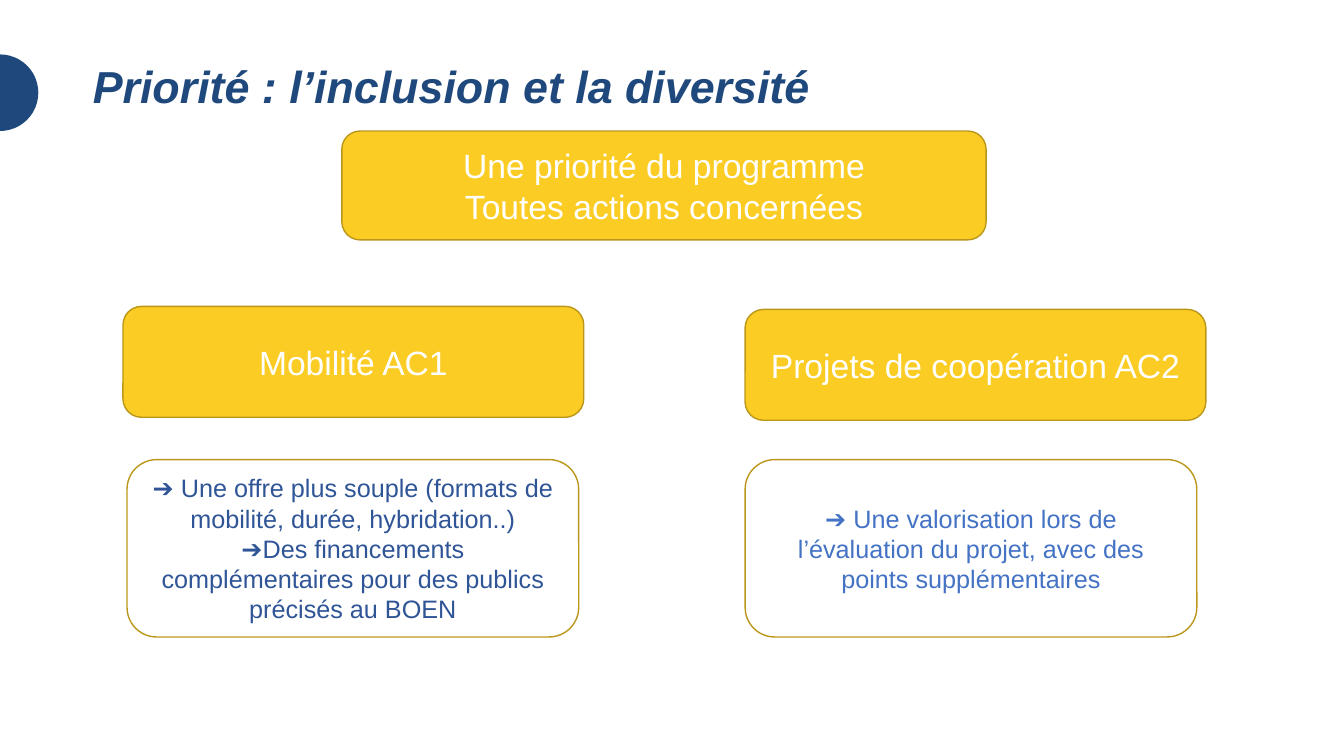
from pptx import Presentation
from pptx.dml.color import RGBColor
from pptx.enum.shapes import MSO_SHAPE as SHAPE
from pptx.enum.text import MSO_ANCHOR as ANCHOR, PP_ALIGN as ALIGN
from pptx.util import Inches, Pt

NAVY = RGBColor(0x1F, 0x49, 0x7D)
YELLOW = RGBColor(0xFB, 0xCC, 0x23)
OCHRE = RGBColor(0xBA, 0x97, 0x1A)
WHITE = RGBColor(0xFF, 0xFF, 0xFF)
DARK_BLUE = RGBColor(0x2F, 0x55, 0x97)
BLUE = RGBColor(0x44, 0x72, 0xC4)

prs = Presentation()
prs.slide_width = Inches(13.33)
prs.slide_height = Inches(7.5)
slide = prs.slides.add_slide(prs.slide_layouts[6])


def add_box(left, top, width, height, fill, size, color, lines):
    """Add a rounded box with one centred paragraph per line."""
    box = slide.shapes.add_shape(SHAPE.ROUNDED_RECTANGLE, Inches(left), Inches(top),
                                 Inches(width), Inches(height))
    box.shadow.inherit = False
    box.fill.solid()
    box.fill.fore_color.rgb = fill
    box.line.color.rgb = OCHRE
    box.line.width = Pt(1)
    frame = box.text_frame
    frame.word_wrap = True
    frame.vertical_anchor = ANCHOR.MIDDLE
    frame.text = "\n".join(lines)
    for paragraph in frame.paragraphs:
        paragraph.alignment = ALIGN.CENTER
        paragraph.font.name = "Arial"
        paragraph.font.size = Pt(size)
        paragraph.font.color.rgb = color


# Title and the disc at the left edge
title = slide.shapes.add_textbox(Inches(0.92), Inches(0.64), Inches(10.01), Inches(0.55)).text_frame
title.word_wrap = True
title.margin_left = title.margin_right = title.margin_top = title.margin_bottom = 0
heading = title.paragraphs[0]
heading.text = "Priorité : l’inclusion et la diversité"
heading.line_spacing = 0.9
heading.font.name = "Arial"
heading.font.size = Pt(32)
heading.font.bold = True
heading.font.italic = True
heading.font.color.rgb = NAVY

disc = slide.shapes.add_shape(SHAPE.OVAL, Inches(-0.38), Inches(0.54), Inches(0.76), Inches(0.76))
disc.shadow.inherit = False
disc.fill.solid()
disc.fill.fore_color.rgb = NAVY
disc.line.fill.background()

# Priority, then the two actions
add_box(3.39, 1.3, 6.39, 1.08, YELLOW, 24, WHITE,
        ["Une priorité du programme", "Toutes actions concernées"])
for left, top, action in [(1.22, 3.04, "Mobilité AC1"),
                          (7.39, 3.07, "Projets de coopération AC2")]:
    add_box(left, top, 4.57, 1.1, YELLOW, 24, WHITE, [action])

# What each action brings
benefits = [
    (1.26, DARK_BLUE, ["➔ Une offre plus souple (formats de mobilité, durée, hybridation..)",
                       "➔Des financements complémentaires pour des publics précisés au BOEN"]),
    (7.39, BLUE, ["➔ Une valorisation lors de l’évaluation du projet, "
                  "avec des points supplémentaires"]),
]
for left, color, lines in benefits:
    add_box(left, 4.56, 4.48, 1.76, WHITE, 18, color, lines)

prs.save("out.pptx")
